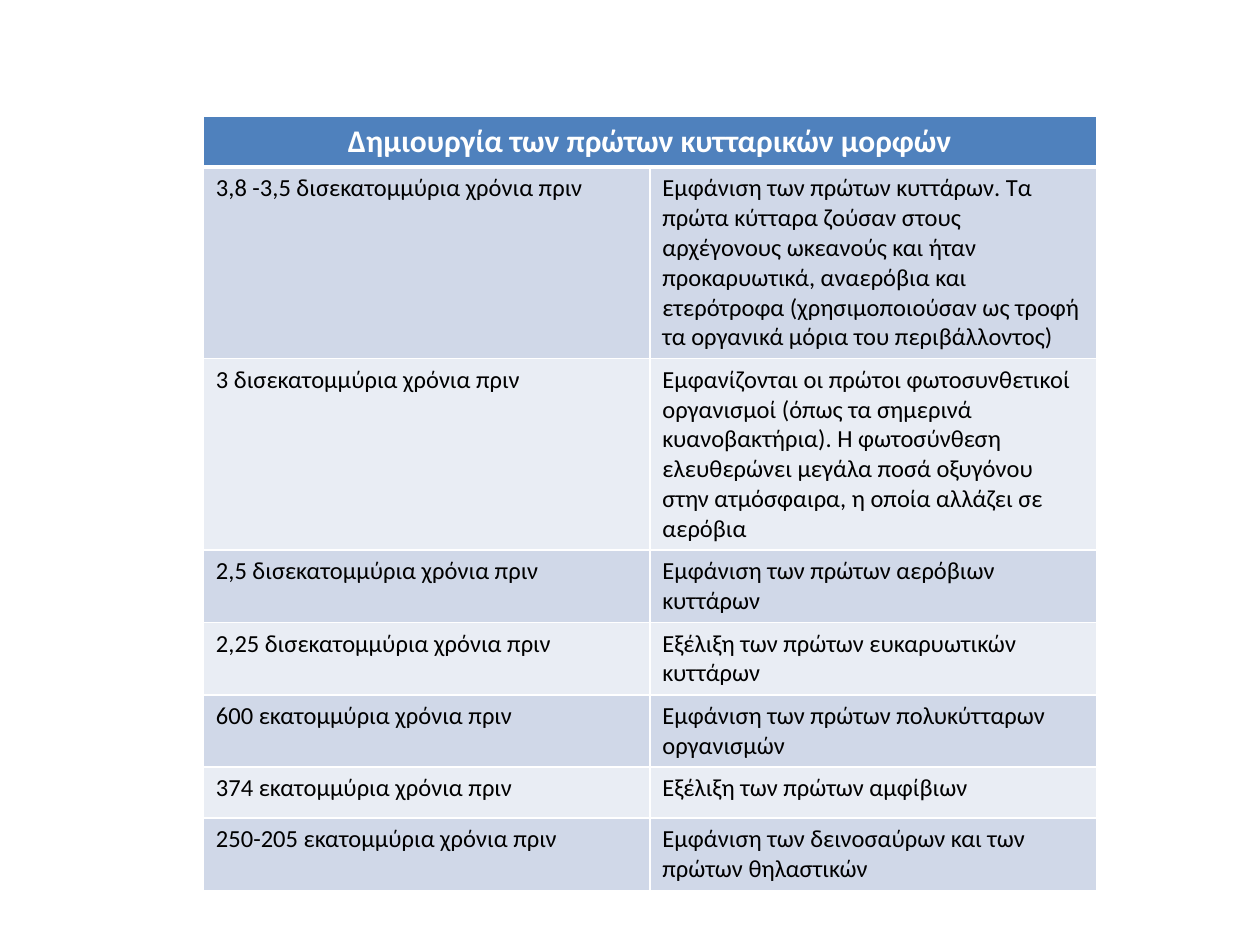
from lxml import etree
from pptx import Presentation
from pptx.dml.color import RGBColor
from pptx.enum.text import PP_ALIGN
from pptx.oxml.ns import qn
from pptx.util import Cm, Pt

HEADER = "Δημιουργία των πρώτων κυτταρικών μορφών"
EVENTS = [
    ("3,8 -3,5 δισεκατομμύρια χρόνια πριν",
     "Εμφάνιση των πρώτων κυττάρων. Τα πρώτα κύτταρα ζούσαν στους αρχέγονους "
     "ωκεανούς και ήταν προκαρυωτικά, αναερόβια και ετερότροφα "
     "(χρησιμοποιούσαν ως τροφή τα οργανικά μόρια του περιβάλλοντος)"),
    ("3 δισεκατομμύρια χρόνια πριν",
     "Εμφανίζονται οι πρώτοι φωτοσυνθετικοί οργανισμοί (όπως τα σημερινά "
     "κυανοβακτήρια). Η φωτοσύνθεση ελευθερώνει μεγάλα ποσά οξυγόνου στην "
     "ατμόσφαιρα, η οποία αλλάζει σε αερόβια"),
    ("2,5 δισεκατομμύρια χρόνια πριν", "Εμφάνιση των πρώτων αερόβιων κυττάρων"),
    ("2,25 δισεκατομμύρια χρόνια πριν", "Εξέλιξη των πρώτων ευκαρυωτικών κυττάρων"),
    ("600 εκατομμύρια χρόνια πριν", "Εμφάνιση των πρώτων πολυκύτταρων οργανισμών"),
    ("374 εκατομμύρια χρόνια πριν", "Εξέλιξη των πρώτων αμφίβιων"),
    ("250-205 εκατομμύρια χρόνια πριν",
     "Εμφάνιση των δεινοσαύρων και των πρώτων θηλαστικών"),
]


def color(value):
    return RGBColor.from_string(value)


def style_cell(cell, fill, top=1, bottom=1):
    """Fill a cell and give it white borders, widths in points."""
    cell.fill.solid()
    cell.fill.fore_color.rgb = color(fill)
    tcPr = cell._tc.get_or_add_tcPr()
    # Borders come before the fill in the cell properties
    for i, (side, width) in enumerate(
            [("lnL", 1), ("lnR", 1), ("lnT", top), ("lnB", bottom)]):
        ln = etree.Element(qn(f"a:{side}"), w=str(Pt(width)))
        line_fill = etree.SubElement(ln, qn("a:solidFill"))
        etree.SubElement(line_fill, qn("a:srgbClr"), val="FFFFFF")
        tcPr.insert(i, ln)


prs = Presentation()
prs.slide_width, prs.slide_height = Cm(25.4), Cm(19.05)
s = prs.slides.add_slide(prs.slide_layouts[6])

# Timeline table; the rows grow with their text
n_rows = len(EVENTS) + 1
row_height = Cm(1.03)
table = s.shapes.add_table(n_rows, 2, Cm(4.1), Cm(2.34),
                           Cm(18), row_height * n_rows).table
for row in table.rows:
    row.height = row_height

# Header across both columns
for cell in table.rows[0].cells:
    style_cell(cell, "4F81BD", bottom=3)
header = table.cell(0, 0)
header.merge(table.cell(0, 1))
p = header.text_frame.paragraphs[0]
p.alignment = PP_ALIGN.CENTER
r = p.add_run()
r.text = HEADER
r.font.name, r.font.size, r.font.bold = "Calibri", Pt(18), True
r.font.color.rgb = color("FFFFFF")

# Events in alternating bands
for i, event in enumerate(EVENTS, start=1):
    for j, text in enumerate(event):
        cell = table.cell(i, j)
        style_cell(cell, "D0D8E8" if i % 2 else "E9EDF4", top=3 if i == 1 else 1)
        r = cell.text_frame.paragraphs[0].add_run()
        r.text = text
        r.font.name, r.font.size, r.font.bold = "Calibri", Pt(14), False
        r.font.color.rgb = color("000000")

prs.save("out.pptx")
